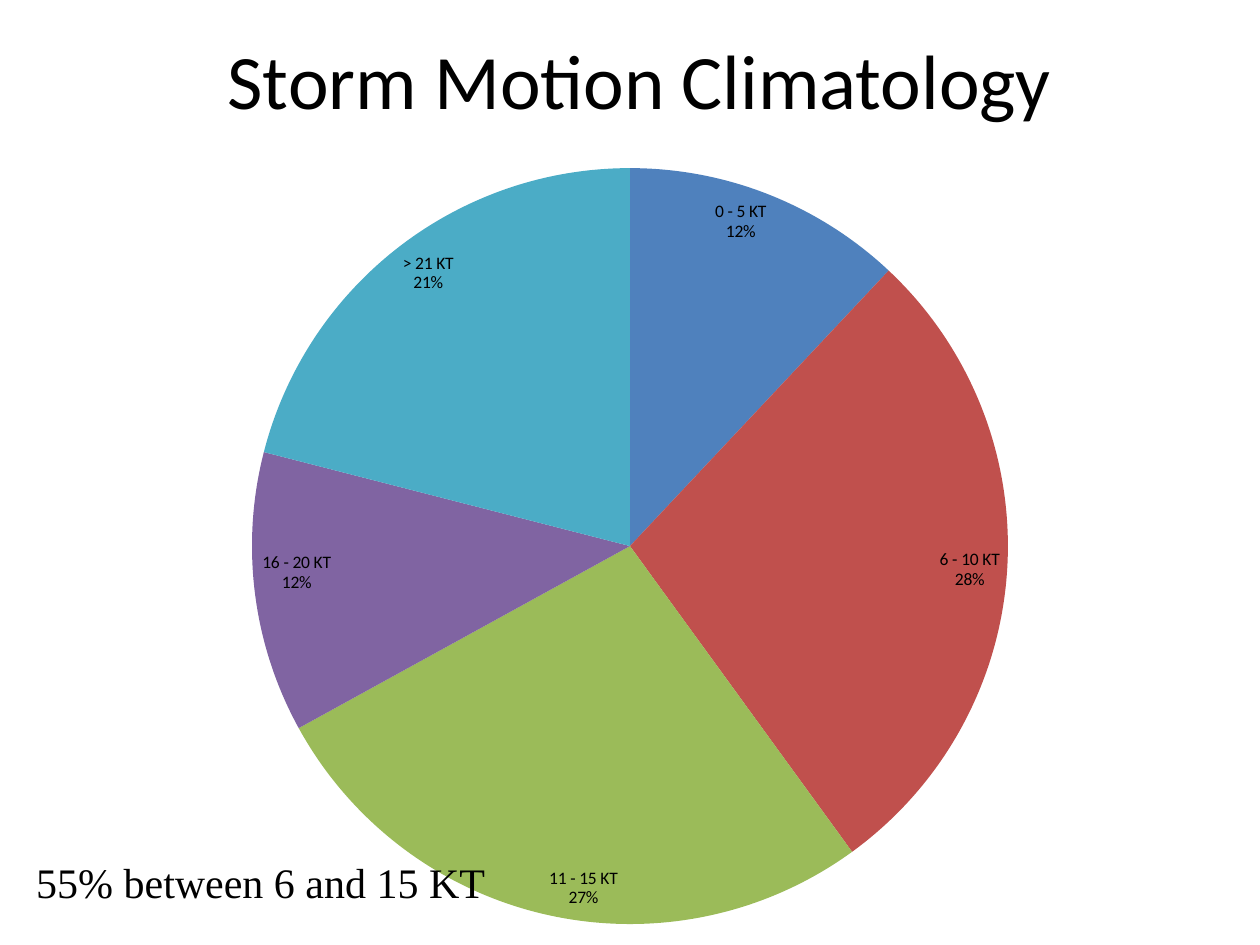
from lxml.etree import SubElement
from pptx import Presentation
from pptx.chart.data import CategoryChartData
from pptx.dml.color import RGBColor
from pptx.enum.chart import XL_CHART_TYPE as ChartType, XL_LABEL_POSITION as LabelPosition
from pptx.enum.text import MSO_ANCHOR as Anchor, PP_ALIGN as Align
from pptx.oxml import parse_xml
from pptx.oxml.ns import nsdecls, qn
from pptx.util import Cm, Pt

COLORS = {
    "text": "000000",
    "0 - 5 KT": "4F81BD",
    "6 - 10 KT": "C0504D",
    "11 - 15 KT": "9BBB59",
    "16 - 20 KT": "8064A2",
    "> 21 KT": "4BACC6",
}
STORM_SPEEDS = {
    "0 - 5 KT": 12,
    "6 - 10 KT": 28,
    "11 - 15 KT": 27,
    "16 - 20 KT": 12,
    "> 21 KT": 21,
}
# Boxes in cm: left, top, width, height
TEXTS = [
    {"text": "Storm Motion Climatology", "at": (1.47, 0, 22.86, 3.18),
     "anchor": Anchor.MIDDLE, "wrap": True,
     "font": {"name": "Calibri", "size": Pt(44)}},
    {"text": "55% between 6 and 15 KT", "at": (0.43, 17.15, 9.65, 1.27),
     "anchor": Anchor.TOP, "wrap": False,
     "font": {"name": "Times New Roman", "size": Pt(24)}},
]
CHART_AT = (0, 2.97, 25.4, 16.08)
LABEL_FONT = {"name": "Calibri", "size": Pt(10)}
LABEL_FORMAT = {
    "show_category_name": True,
    "show_percentage": True,
    "show_value": False,
    "number_format": "0%",
    "number_format_is_linked": False,
    "position": LabelPosition.INSIDE_END,
}
# Plot area as shares of the chart
PLOT_LAYOUT = {"x": 0.2, "y": 0.02, "w": 0.6, "h": 0.96}


def set_font(font, values):
    for name, value in values.items():
        setattr(font, name, value)
    font.color.rgb = RGBColor.from_string(COLORS["text"])


def add_pie(page):
    data = CategoryChartData()
    data.categories = list(STORM_SPEEDS)
    data.add_series("Series 1", list(STORM_SPEEDS.values()))
    chart = page.shapes.add_chart(ChartType.PIE, *map(Cm, CHART_AT), data).chart
    chart.has_title = False
    chart.has_legend = False
    set_font(chart.font, LABEL_FONT)

    # Slices
    plot = chart.plots[0]
    plot.vary_by_categories = True
    for index, speed in enumerate(STORM_SPEEDS):
        fill = plot.series[0].points[index].format.fill
        fill.solid()
        fill.fore_color.rgb = RGBColor.from_string(COLORS[speed])

    # Labels: category above percentage
    labels = plot.series[0].data_labels
    set_font(labels.font, LABEL_FONT)
    for name, value in LABEL_FORMAT.items():
        setattr(labels, name, value)
    separator = parse_xml(f"<c:separator {nsdecls('c')}>\n</c:separator>")
    labels._element.find(qn("c:showBubbleSize")).addnext(separator)

    # Fixed place for the pie
    plot_area = chart._chartSpace.chart.plotArea
    layout = plot_area.find(qn("c:layout"))
    if layout is None:
        layout = parse_xml(f"<c:layout {nsdecls('c')}/>")
        plot_area.insert(0, layout)
    manual = SubElement(layout, qn("c:manualLayout"))
    SubElement(manual, qn("c:layoutTarget")).set("val", "inner")
    for side in "xy":
        SubElement(manual, qn(f"c:{side}Mode")).set("val", "edge")
    for side, share in PLOT_LAYOUT.items():
        SubElement(manual, qn(f"c:{side}")).set("val", str(share))


def add_text(page, item):
    frame = page.shapes.add_textbox(*map(Cm, item["at"])).text_frame
    frame.word_wrap = item["wrap"]
    frame.vertical_anchor = item["anchor"]
    para = frame.paragraphs[0]
    para.alignment = Align.CENTER
    span = para.add_run()
    span.text = item["text"]
    set_font(span.font, item["font"])


def main():
    deck = Presentation()
    deck.slide_width, deck.slide_height = Cm(25.4), Cm(19.05)
    page = deck.slides.add_slide(deck.slide_layouts[6])
    add_pie(page)
    for item in TEXTS:
        add_text(page, item)
    deck.save("out.pptx")


if __name__ == "__main__":
    main()
